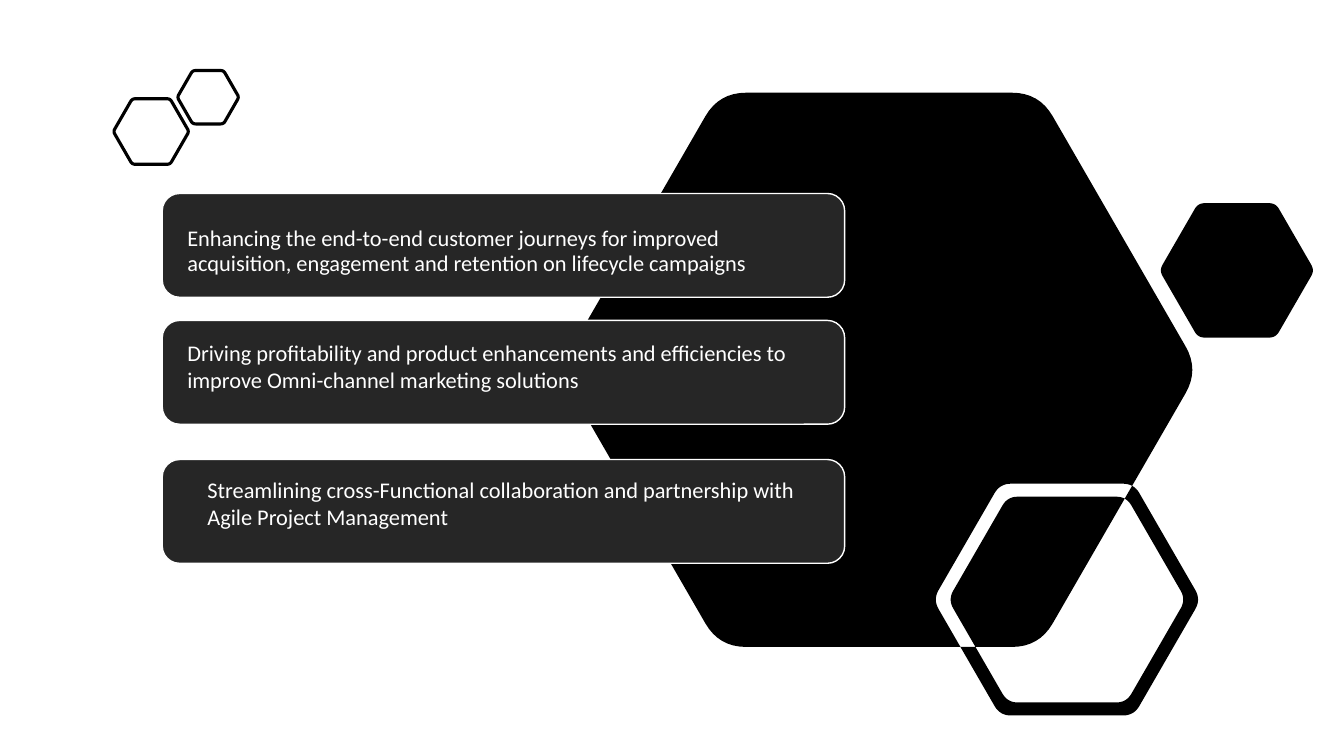
from math import cos, pi, sin, sqrt

from pptx import Presentation
from pptx.dml.color import RGBColor
from pptx.enum.shapes import MSO_SHAPE as SHAPE
from pptx.enum.text import MSO_ANCHOR as ANCHOR, MSO_AUTO_SIZE as AUTO, PP_ALIGN as ALIGN
from pptx.util import Inches, Pt

BLACK = RGBColor(0x00, 0x00, 0x00)
CHARCOAL = RGBColor(0x26, 0x26, 0x26)
WHITE = RGBColor(0xFF, 0xFF, 0xFF)

prs = Presentation()
prs.slide_width, prs.slide_height = Inches(13.33), Inches(7.5)
s = prs.slides.add_slide(prs.slide_layouts[6])
U = prs.slide_width / 160  # grid of 160 columns by 90 rows, square cells


def hexagon(cx, cy, height, cut, steps=8):
    """Points of a regular hexagon, each corner rounded off from `cut` cells away."""
    side = height / sqrt(3)
    corners = [(cx + side * cos(k * pi / 3), cy + side * sin(k * pi / 3)) for k in range(6)]
    points = []
    for k, corner in enumerate(corners):
        before, after = corners[k - 1], corners[(k + 1) % 6]
        a, b = [[c + (n - c) * cut / side for c, n in zip(corner, near)]
                for near in (before, after)]
        for i in range(steps + 1):
            t = i / steps
            points.append(tuple(U * ((1 - t) ** 2 * p + 2 * t * (1 - t) * c + t ** 2 * q)
                                for p, c, q in zip(a, corner, b)))
    return points


def add_text(text, x, y, w, h, size=16, color=WHITE, font="Calibri", spacing=1.0, top=0.05):
    tf = s.shapes.add_textbox(*(round(U * v) for v in (x, y, w, h))).text_frame
    tf.word_wrap = True
    tf.auto_size = AUTO.NONE
    tf.vertical_anchor = ANCHOR.TOP
    tf.margin_top = Inches(top)
    p = tf.paragraphs[0]
    p.alignment = ALIGN.LEFT
    p.line_spacing = spacing
    r = p.add_run()
    r.text = text
    r.font.size, r.font.name, r.font.color.rgb = Pt(size), font, color


# Each group of outlines is one freeform; overlapping outlines cancel out
outlined = dict(fill=None, line=BLACK)
solid = dict(fill=BLACK, line=None)
hexagon_groups = [
    ([(18, 15.66, 7.8, 0.36)], outlined),
    ([(24.78, 11.58, 6.36, 0.36)], outlined),
    ([(104.65, 44.04, 66, 3.24), (147.25, 32.2, 16, 0.77),
      (127.02, 71.4, 27.6, 1.3), (127.02, 71.4, 24.5, 1.2)], solid),
]
for hexagons, style in hexagon_groups:
    outlines = [hexagon(*h) for h in hexagons]
    builder = s.shapes.build_freeform(*outlines[0][0], scale=1.0)
    for points in outlines:
        builder.move_to(*points[0])
        builder.add_line_segments(points[1:], close=True)
    sp = builder.convert_to_shape()
    sp.shadow.inherit = False
    if style["fill"] is None:
        sp.fill.background()
    else:
        sp.fill.solid()
        sp.fill.fore_color.rgb = style["fill"]
    if style["line"] is None:
        sp.line.fill.background()
    else:
        sp.line.color.rgb = style["line"]
        sp.line.width = Pt(2.25)

CARD_X, CARD_W, CARD_H = 19.32, 81.24, 12.36
for card_y in (23.04, 38.16, 54.72):
    sp = s.shapes.add_shape(SHAPE.ROUNDED_RECTANGLE,
                            *(round(U * v) for v in (CARD_X, card_y, CARD_W, CARD_H)))
    sp.shadow.inherit = False
    sp.fill.solid()
    sp.fill.fore_color.rgb = CHARCOAL
    sp.line.color.rgb = WHITE
    sp.line.width = Pt(1)

TEXT_H = 7.7
add_text("Enhancing the end-to-end customer journeys for improved acquisition, "
         "engagement and retention on lifecycle campaigns",
         21.12, 27.1, 76, TEXT_H, spacing=0.9, top=0)
add_text("Driving profitability and product enhancements and efficiencies to "
         "improve Omni-channel marketing solutions", 21.12, 39.84, 77.3, TEXT_H)
add_text("Streamlining cross-Functional collaboration and partnership with "
         "Agile Project Management", 23.52, 56.16, 76.6, TEXT_H)

prs.save("out.pptx")
